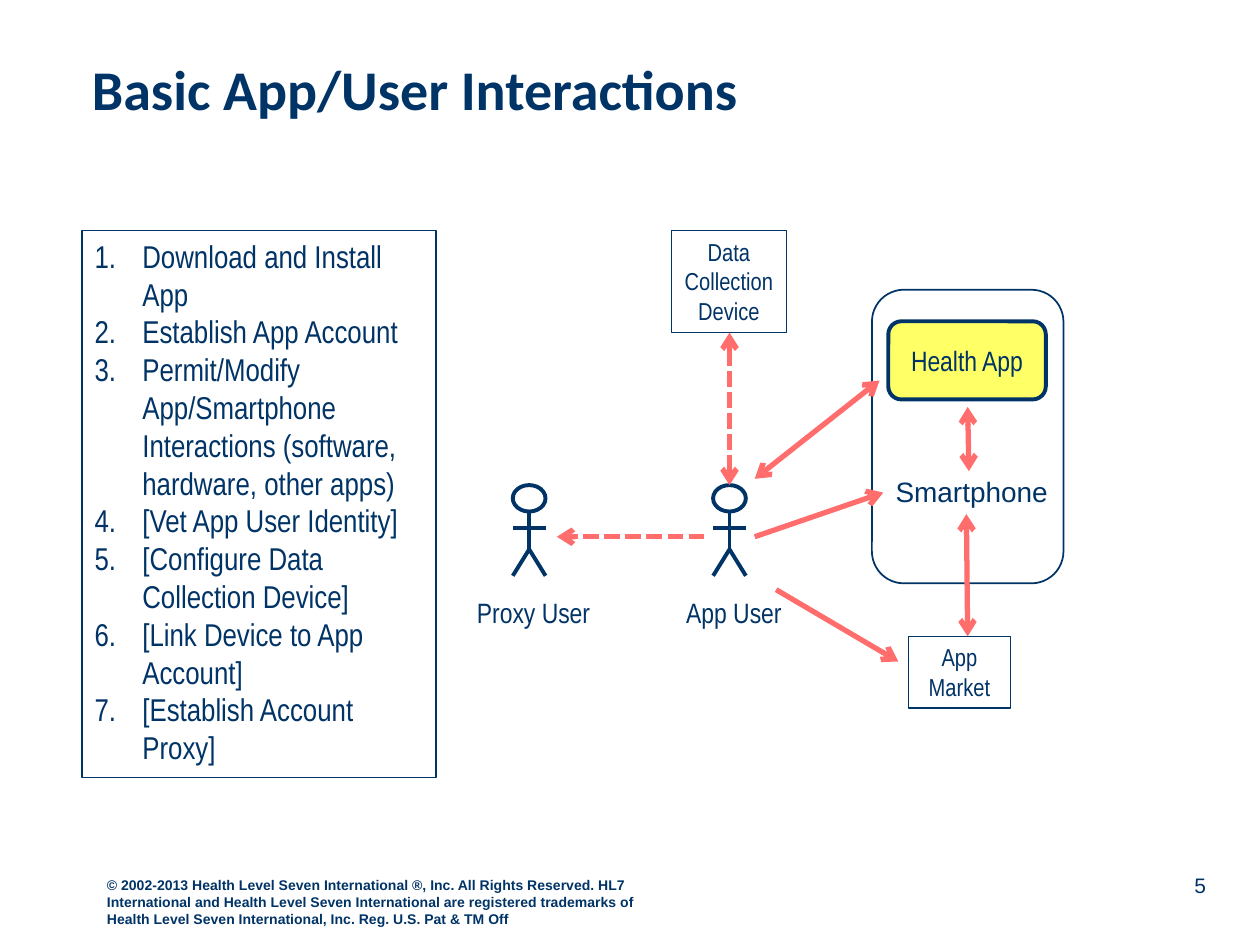
"""Build the slide on basic interactions between an app and its user."""
from dataclasses import dataclass

from lxml import etree
from pptx import Presentation
from pptx import util as u
from pptx.dml.color import RGBColor
from pptx.enum import dml, shapes, text
from pptx.oxml.ns import qn

NAVY, CORAL, WHITE, YELLOW = "003366", "FF6D6D", "FFFFFF", "FFFF66"
NARROW = "Arial Narrow"
LEFT, CENTER, RIGHT = text.PP_ALIGN.LEFT, text.PP_ALIGN.CENTER, text.PP_ALIGN.RIGHT
TOP, MIDDLE, BOTTOM = (text.MSO_ANCHOR.TOP, text.MSO_ANCHOR.MIDDLE,
                       text.MSO_ANCHOR.BOTTOM)
RECT, ROUNDED, OVAL = (shapes.MSO_SHAPE.RECTANGLE,
                       shapes.MSO_SHAPE.ROUNDED_RECTANGLE, shapes.MSO_SHAPE.OVAL)

STEPS = (
    "Download and Install App",
    "Establish App Account",
    "Permit/Modify App/Smartphone Interactions (software, hardware, other apps)",
    "[Vet App User Identity]",
    "[Configure Data Collection Device]",
    "[Link Device to App Account]",
    "[Establish Account Proxy]",
)
COPYRIGHT = (
    "© 2002-2013 Health Level Seven International ®, Inc. All Rights Reserved. "
    "HL7 International and Health Level Seven International are registered "
    "trademarks of Health Level Seven International, Inc. Reg. U.S. Pat & TM Off"
)


@dataclass
class Area:
    left: float
    top: float
    width: float
    height: float

    def lengths(self) -> list:
        return [u.Inches(n) for n in (self.left, self.top, self.width, self.height)]


@dataclass
class Style:
    size: float
    font: str = NARROW
    bold: bool = False
    align: text.PP_ALIGN = CENTER
    anchor: text.MSO_ANCHOR = TOP
    wrap: bool = True


@dataclass
class Arrow:
    start: tuple
    end: tuple
    both: bool = False
    dashed: bool = False


@dataclass
class Person:
    name: str
    middle: float
    label: Area


ARROWS = (
    Arrow((5.99, 3.8), (6.98, 3.02), both=True),
    Arrow((5.99, 4.26), (7.01, 3.91)),
    Arrow((5.79, 2.64), (5.79, 3.85), both=True, dashed=True),
    Arrow((6.16, 4.68), (7.13, 5.25)),
    Arrow((5.59, 4.26), (4.42, 4.26), dashed=True),
    Arrow((7.68, 3.23), (7.69, 3.74), both=True),
    Arrow((7.67, 4.08), (7.68, 5.05), both=True),
)
PEOPLE = (
    Person("App User", 5.79, Area(5.34, 4.68, 0.97, 0.37)),
    Person("Proxy User", 4.2, Area(3.68, 4.68, 1.11, 0.37)),
)


def color(value: str) -> RGBColor:
    return RGBColor.from_string(value)


def outline(line, value: str, width: float) -> None:
    line.color.rgb = color(value)
    line.width = u.Pt(width)


def write(box, lines: tuple, style: Style, numbered: bool = False) -> None:
    frame = box.text_frame
    frame.auto_size = text.MSO_AUTO_SIZE.NONE
    frame.word_wrap = style.wrap
    frame.vertical_anchor = style.anchor
    frame.text = "\n".join(lines)
    for para in frame.paragraphs:
        if numbered:
            props = para._p.get_or_add_pPr()
            props.set("marL", str(u.Inches(0.38)))
            props.set("indent", str(-u.Inches(0.38)))
            etree.SubElement(props, qn("a:buFont"), typeface="+mj-lt")
            etree.SubElement(props, qn("a:buAutoNum"), type="arabicPeriod")
        para.alignment = style.align
        para.space_before = u.Pt(0)
        para.font.name = style.font
        para.font.size = u.Pt(style.size)
        para.font.bold = style.bold
        para.font.color.rgb = color(NAVY)


def place(box, area: Area) -> None:
    box.left, box.top, box.width, box.height = area.lengths()


def add_label(parent, area: Area, words: str, style: Style) -> None:
    write(parent.shapes.add_textbox(*area.lengths()), (words,), style)


def add_box(parent, kind, area: Area, width: float, fill: str = WHITE):
    box = parent.shapes.add_shape(kind, *area.lengths())
    box.shadow.inherit = False
    box.fill.solid()
    box.fill.fore_color.rgb = color(fill)
    outline(box.line, NAVY, width)
    return box


def add_line(parent, start: tuple, end: tuple, value: str, width: float):
    points = [u.Inches(n) for n in (*start, *end)]
    line = parent.shapes.add_connector(shapes.MSO_CONNECTOR.STRAIGHT, *points)
    outline(line.line, value, width)
    etree.SubElement(line._element.spPr, qn("a:effectLst"))
    return line


def add_arrow(page, arrow: Arrow) -> None:
    line = add_line(page, arrow.start, arrow.end, CORAL, 3).line
    if arrow.dashed:
        line.dash_style = dml.MSO_LINE.SQUARE_DOT
    for tag in ("a:headEnd", "a:tailEnd") if arrow.both else ("a:tailEnd",):
        etree.SubElement(line._get_or_add_ln(), qn(tag), type="arrow")


def add_person(page, person: Person) -> None:
    group = page.shapes.add_group_shape()
    x, left, right = person.middle, person.middle - 0.13, person.middle + 0.13
    add_box(group, OVAL, Area(left, 3.85, 0.26, 0.21), 2.25)
    hip = (x, 4.36)
    for start, end in (((x, 4.06), hip), (hip, (left, 4.57)),
                       ((left, 4.19), (right, 4.19)), (hip, (right, 4.57))):
        add_line(group, start, end, NAVY, 2.25)
    add_label(group, person.label, person.name, Style(16, wrap=False))


def main() -> None:
    deck = Presentation()
    deck.slide_width, deck.slide_height = u.Inches(10), u.Inches(7.5)
    page = deck.slides.add_slide(deck.slide_layouts[1])

    title, steps = page.placeholders
    place(title, Area(0.63, 0.38, 8.33, 0.91))
    write(title, ("Basic App/User Interactions",),
          Style(32, "Calibri", bold=True, align=LEFT))
    place(steps, Area(0.65, 1.83, 2.81, 4.34))
    write(steps, STEPS, Style(18, align=LEFT), numbered=True)
    outline(steps.line, NAVY, 0.75)

    add_label(page, Area(9, 6.65, 0.67, 0.52), "5",
              Style(12, "Arial", align=RIGHT, anchor=BOTTOM))
    add_label(page, Area(0.75, 6.91, 4.58, 0.5), COPYRIGHT,
              Style(8, "Arial", bold=True, align=LEFT))

    phone = page.shapes.add_group_shape()
    add_box(phone, ROUNDED, Area(6.92, 2.3, 1.52, 2.33), 1)
    app = add_box(phone, ROUNDED, Area(7.05, 2.55, 1.25, 0.62), 2.25, YELLOW)
    write(app, ("Health App",), Style(16, anchor=MIDDLE, wrap=False))
    add_label(page, Area(7.01, 3.72, 1.49, 0.37), "Smartphone",
              Style(16, "Arial", align=LEFT))

    device = add_box(page, RECT, Area(5.33, 1.83, 0.91, 0.81), 0.75)
    write(device, ("Data", "Collection", "Device"), Style(14, wrap=False))
    market = add_box(page, RECT, Area(7.21, 5.05, 0.81, 0.57), 0.75)
    write(market, ("App", "Market"), Style(14))

    for person in PEOPLE:
        add_person(page, person)
    for arrow in ARROWS:
        add_arrow(page, arrow)
    deck.save("out.pptx")


if __name__ == "__main__":
    main()
